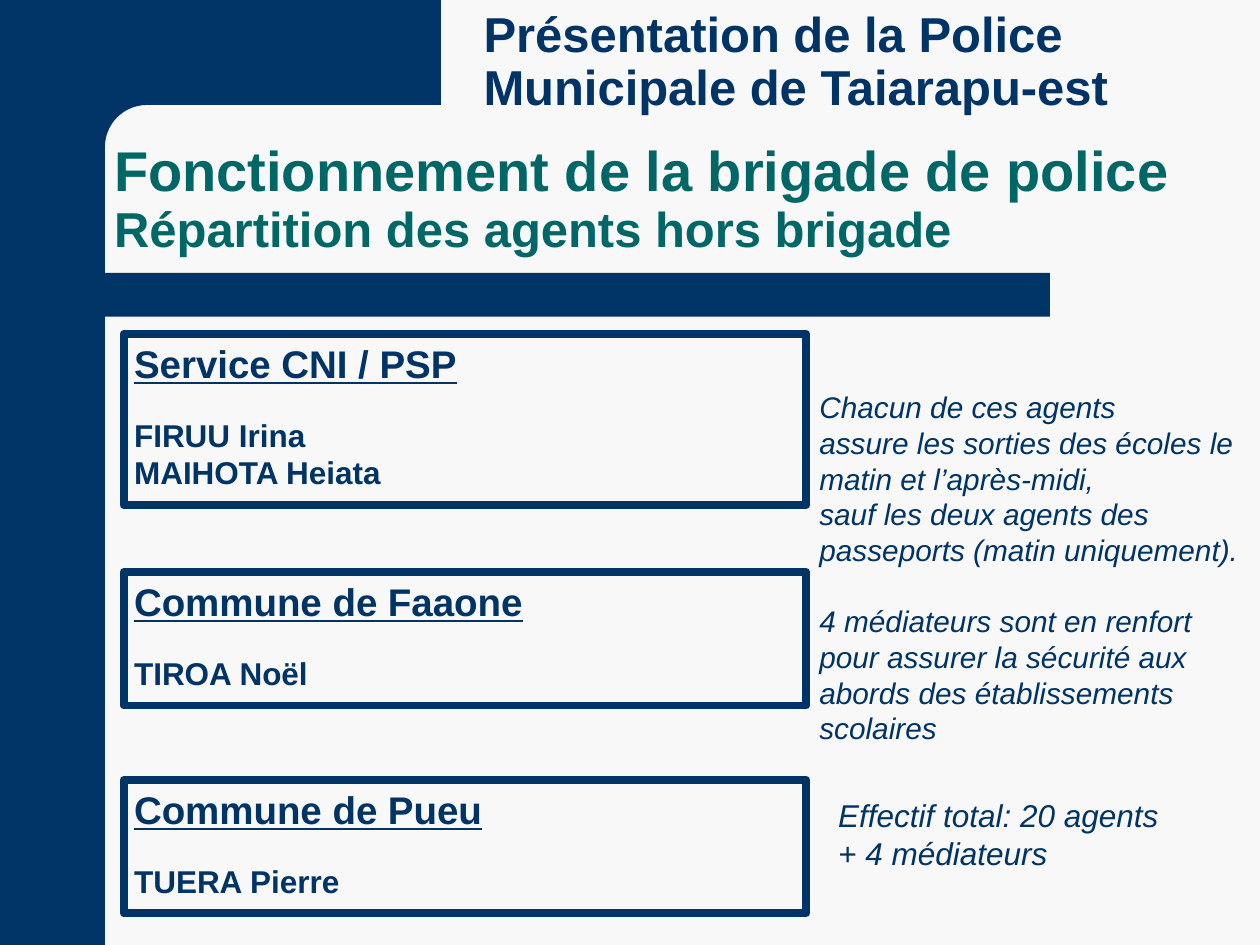
"""Build the slide on how the municipal police brigade is organised."""
from math import cos, pi, sin

from pptx import Presentation
from pptx.dml.color import RGBColor
from pptx.enum.shapes import MSO_SHAPE
from pptx.enum.text import MSO_ANCHOR, PP_ALIGN
from pptx.util import Pt

NAVY, TEAL, PAPER = "003366", "006666", "F8F8F8"
HEADER = "Présentation de la Police Municipale de Taiarapu-est"
TITLE = [("Fonctionnement de la brigade de police", 32),
         ("Répartition des agents hors brigade", 28)]
SERVICES = [
    (190.8, "Service CNI / PSP", ["FIRUU Irina", "MAIHOTA Heiata"]),
    (326.9, "Commune de Faaone", ["TIROA Noël"]),
    (445.7, "Commune de Pueu", ["TUERA Pierre"]),
]
NOTES = [
    ["Chacun de ces agents",
     "assure les sorties des écoles le matin et l’après-midi,",
     "sauf les deux agents des passeports (matin uniquement)."],
    ["4 médiateurs sont en renfort",
     "pour assurer la sécurité aux abords des établissements scolaires"],
]
TOTAL = ["Effectif total: 20 agents", "+ 4 médiateurs"]
LEADING = 1.2
BAND, TOP, RADIUS = 60, 60, 24


def rgb(value):
    return RGBColor.from_string(value)


def paint(sp, fill=None, line=None):
    sp.shadow.inherit = False
    if fill:
        sp.fill.solid()
        sp.fill.fore_color.rgb = rgb(fill)
    else:
        sp.fill.background()
    if line:
        sp.line.color.rgb = rgb(line)
        sp.line.width = Pt(4.5)
    else:
        sp.line.fill.background()


def add_rect(s, left, top, width, height, **look):
    sp = s.shapes.add_shape(MSO_SHAPE.RECTANGLE, Pt(left), Pt(top), Pt(width), Pt(height))
    paint(sp, **look)
    return sp


def add_box(s, left, top, width, height):
    return s.shapes.add_textbox(Pt(left), Pt(top), Pt(width), Pt(height))


def set_frame(sp, anchor=MSO_ANCHOR.TOP, inset=6):
    tf = sp.text_frame
    tf.word_wrap = True
    tf.vertical_anchor = anchor
    tf.margin_left, tf.margin_right = Pt(inset), Pt(0)
    tf.margin_top = tf.margin_bottom = Pt(3.6)
    return tf


def add_text(tf, text, size=18, color=NAVY, bold=False, italic=False,
             underline=False, before=0, leading=LEADING):
    first = tf.paragraphs[0]
    p = tf.add_paragraph() if first.runs else first
    p.alignment = PP_ALIGN.LEFT
    p.line_spacing, p.space_before = Pt(size * leading), Pt(before)
    r = p.add_run()
    r.text = text
    r.font.name, r.font.size = "Arial", Pt(size)
    r.font.bold, r.font.italic, r.font.underline = bold, italic, underline
    r.font.color.rgb = rgb(color)


def add_corner(s):
    steps = 16
    angles = [pi / 2 * i / steps for i in range(steps + 1)]
    arc = [(BAND + RADIUS * (1 - sin(a)), TOP + RADIUS * (1 - cos(a))) for a in angles]
    points = [(252, 0), (252, TOP), *arc, (BAND, 92), (36, 92)]
    builder = s.shapes.build_freeform(Pt(36), Pt(0))
    builder.add_line_segments([(Pt(x), Pt(y)) for x, y in points], close=True)
    paint(builder.convert_to_shape(), fill=NAVY)


def main():
    prs = Presentation()
    prs.slide_width, prs.slide_height = Pt(720), Pt(540)
    s = prs.slides.add_slide(prs.slide_layouts[6])
    s.background.fill.solid()
    s.background.fill.fore_color.rgb = rgb(PAPER)

    add_rect(s, 0, 0, BAND, 540, fill=NAVY)
    add_corner(s)
    add_rect(s, 48, 156, 552, 25, fill=NAVY)

    tf = set_frame(add_box(s, 60, 65.5, 660, 85), MSO_ANCHOR.BOTTOM, 5.2)
    for text, size in TITLE:
        add_text(tf, text, size=size, color=TEAL, bold=True, leading=1.12)
    tf = set_frame(add_box(s, 260.6, 0, 459.4, 71.3), MSO_ANCHOR.MIDDLE, 15.7)
    add_text(tf, HEADER, size=28, bold=True, leading=LEADING * 0.9)

    for top, name, agents in SERVICES:
        height = 54.7 + 18 * LEADING * len(agents)
        tf = set_frame(add_rect(s, 70.6, top, 390.2, height, line=NAVY))
        add_text(tf, name, size=22, bold=True, underline=True)
        for i, agent in enumerate(agents):
            add_text(tf, agent, bold=True, before=0 if i else 14 * LEADING)

    tf = set_frame(add_box(s, 462.2, 218.9, 272, 211))
    for g, group in enumerate(NOTES):
        for i, text in enumerate(group):
            gap = 17 * LEADING if g and not i else 0
            add_text(tf, text, size=17, italic=True, before=gap)
    tf = set_frame(add_box(s, 473, 451.4, 247, 50.4))
    for text in TOTAL:
        add_text(tf, text, italic=True)

    prs.save("out.pptx")


if __name__ == "__main__":
    main()
